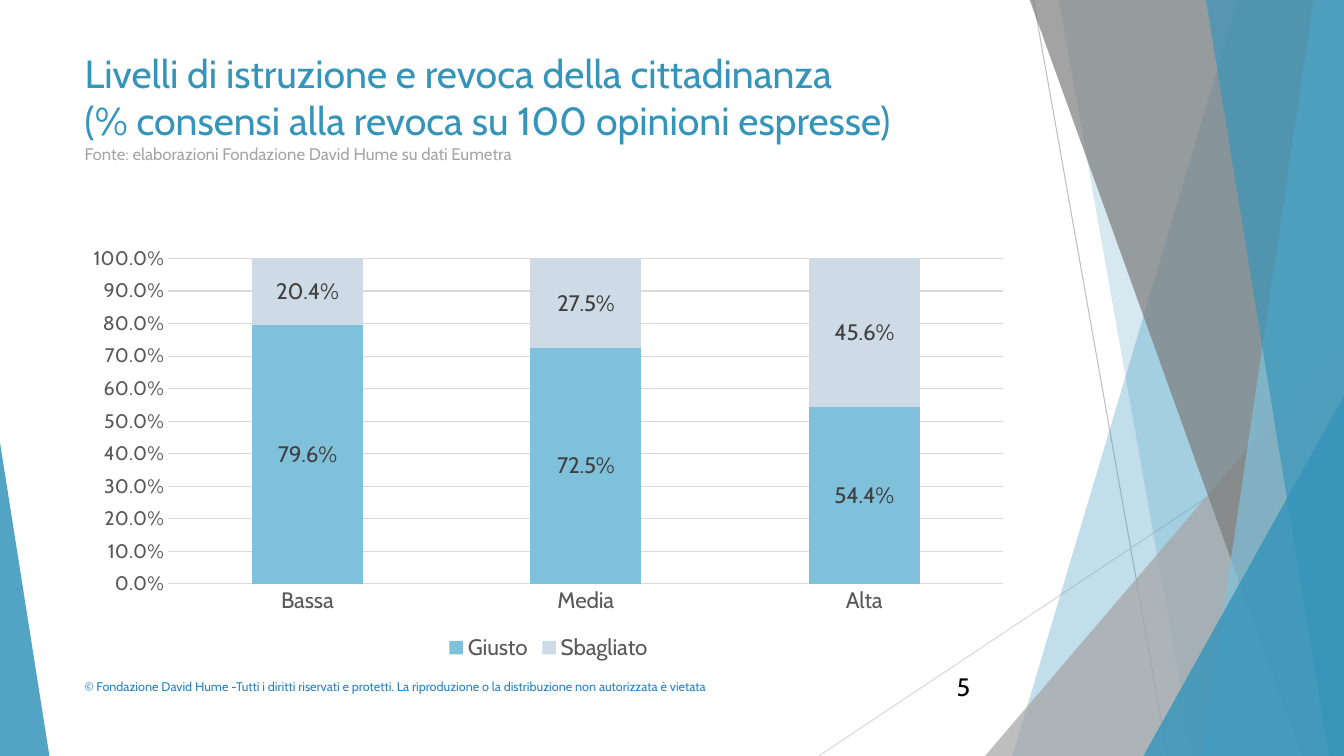
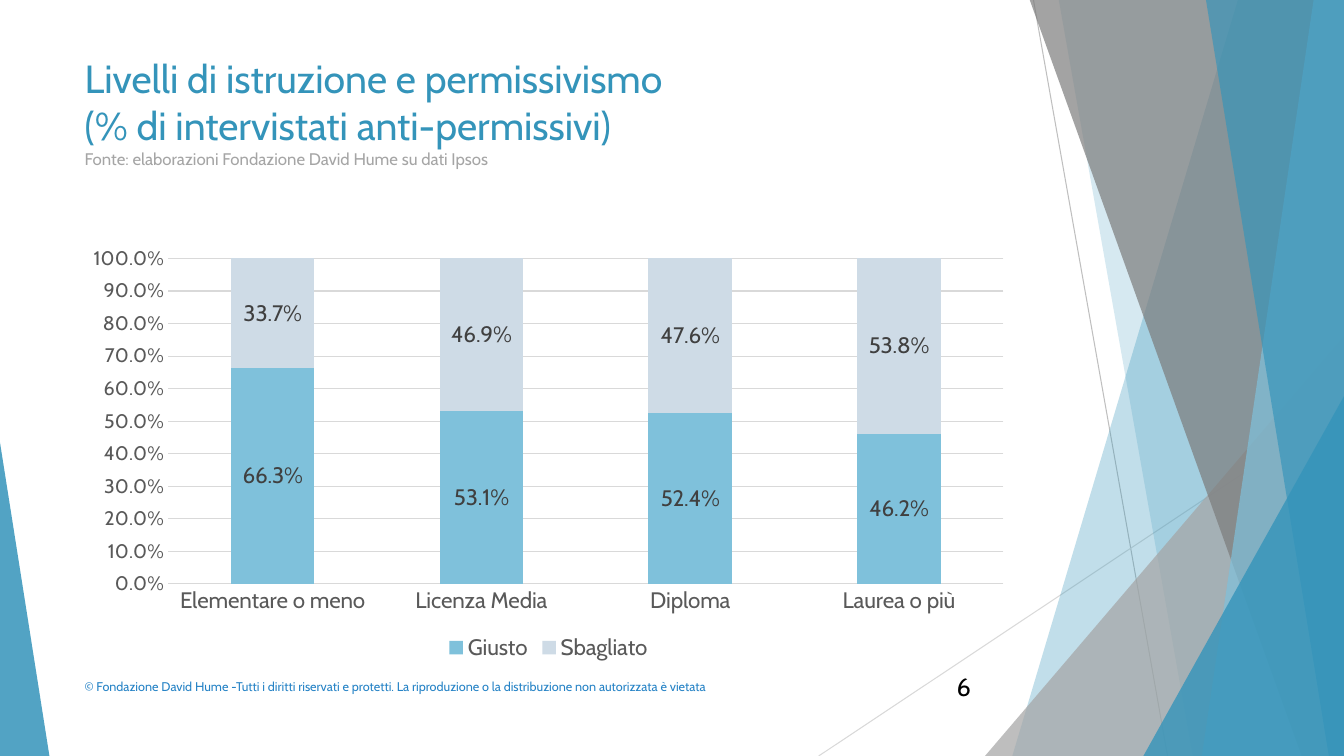
from copy import deepcopy
from dataclasses import dataclass
from typing import NamedTuple

from lxml import etree
from pptx import Presentation
from pptx import util as u
from pptx.chart.data import CategoryChartData
from pptx.dml.color import RGBColor
from pptx.enum import chart as charts, shapes, text
from pptx.oxml.ns import qn

PX = 9144
WIDTH, HEIGHT = 1333, 750
LEFT, CONTENT_WIDTH = 74, 940


@dataclass(frozen=True)
class Theme:
    font: str = "Cabin"
    accent: str = "3494BA"
    light_accent: str = "7FC1DB"
    pale: str = "CEDBE6"
    grey: str = "A5A5A5"
    dark_grey: str = "7C7C7C"
    rule: str = "D9D9D9"
    strong_rule: str = "BFBFBF"
    axis_text: str = "595959"
    label_text: str = "404040"
    copyright: str = "2683C6"
    black: str = "000000"
    title_size: int = 28
    source_size: int = 12
    copyright_size: int = 9
    number_size: int = 18
    chart_size: int = 16
    scale_size: int = 14
    rule_width: float = 0.75


THEME = Theme()


class Box(NamedTuple):
    left: int
    top: int
    width: int
    height: int

    def emu(self) -> list[int]:
        return [value * PX for value in self]


class Ray(NamedTuple):
    start: tuple[int, int]
    end: tuple[int, int]
    color: str


class Shard(NamedTuple):
    top_x: int
    bottom_x: int
    color: str
    opacity: int


class Wedge(NamedTuple):
    box: Box
    apex: int
    color: str
    opacity: int


class Span(NamedTuple):
    words: str
    size: int
    color: str


class Survey(NamedTuple):
    number: int
    title_top: int
    title: list[str]
    source: str
    answers: dict[str, tuple[float, float]]


BACKDROP = [
    Ray((1025, 0), (1158, HEIGHT), THEME.strong_rule),
    Ray((WIDTH, 403), (812, HEIGHT), THEME.rule),
    Shard(1228, 1004, THEME.accent, 30),
    Shard(1050, 1183, THEME.accent, 20),
    Wedge(Box(977, 333, 356, 417), 1, THEME.grey, 72),
    Shard(1021, 1291, THEME.dark_grey, 70),
    Shard(1303, 1192, THEME.light_accent, 70),
    Shard(1196, 1318, THEME.accent, 65),
    Wedge(Box(1134, 393, 199, 357), 1, THEME.accent, 80),
    Wedge(Box(0, 439, 49, 311), 0, THEME.accent, 85),
]

SERIES = {"Giusto": THEME.light_accent, "Sbagliato": THEME.pale}
PERCENT = "0.0%"
COPYRIGHT = (
    "© Fondazione David Hume -Tutti i diritti riservati e protetti. "
    "La riproduzione o la distribuzione non autorizzata è vietata"
)

SURVEYS = [
    Survey(
        5,
        44,
        [
            "Livelli di istruzione e revoca della cittadinanza",
            "(% consensi alla revoca su 100 opinioni espresse)",
        ],
        "Fonte: elaborazioni Fondazione David Hume su dati Eumetra",
        {"Bassa": (0.796, 0.204), "Media": (0.725, 0.275), "Alta": (0.544, 0.456)},
    ),
    Survey(
        6,
        49,
        ["Livelli di istruzione e permissivismo", "(% di intervistati anti-permissivi)"],
        "Fonte: elaborazioni Fondazione David Hume su dati Ipsos",
        {
            "Elementare o meno": (0.663, 0.337),
            "Licenza Media": (0.531, 0.469),
            "Diploma": (0.524, 0.476),
            "Laurea o più": (0.462, 0.538),
        },
    ),
]


def rgb(color: str) -> RGBColor:
    return RGBColor.from_string(color)


def style_font(font, size: int, color: str) -> None:
    font.name = THEME.font
    font.size = u.Pt(size)
    font.bold = False
    font.color.rgb = rgb(color)


def style_line(line, color: str) -> None:
    line.color.rgb = rgb(color)
    line.width = u.Pt(THEME.rule_width)


def paint(shape, color: str, opacity: int) -> None:
    shape.shadow.inherit = False
    shape.line.fill.background()
    shape.fill.solid()
    shape.fill.fore_color.rgb = rgb(color)
    tint = shape._element.spPr.find(qn("a:solidFill"))[0]
    etree.SubElement(tint, qn("a:alpha")).set("val", str(opacity * 1000))


def draw_ray(group, ray: Ray) -> None:
    ends = [value * PX for value in (*ray.start, *ray.end)]
    line = group.shapes.add_connector(shapes.MSO_CONNECTOR.STRAIGHT, *ends)
    style_line(line.line, ray.color)
    etree.SubElement(line._element.spPr, qn("a:effectLst"))


def draw_shard(group, shard: Shard) -> None:
    outline = group.shapes.build_freeform(shard.top_x, -1, scale=PX)
    outline.add_line_segments(
        [(WIDTH, -1), (WIDTH, HEIGHT), (shard.bottom_x, HEIGHT)], close=True
    )
    paint(outline.convert_to_shape(), shard.color, shard.opacity)


def draw_wedge(group, wedge: Wedge) -> None:
    triangle = group.shapes.add_shape(
        shapes.MSO_SHAPE.ISOSCELES_TRIANGLE, *wedge.box.emu()
    )
    triangle.adjustments[0] = wedge.apex
    paint(triangle, wedge.color, wedge.opacity)


def move_backdrop_to_layout(page, layout) -> None:
    group = page.shapes.add_group_shape()
    drawers = {Ray: draw_ray, Shard: draw_shard, Wedge: draw_wedge}
    for part in BACKDROP:
        drawers[type(part)](group, part)
    for number, properties in enumerate(group._element.iter(qn("p:cNvPr")), 100):
        properties.set("id", str(number))
    layout.shapes._spTree.insert(2, group._element)


def write_lines(frame, spans: list[Span], anchor) -> None:
    frame.word_wrap = True
    frame.auto_size = text.MSO_AUTO_SIZE.NONE
    frame.vertical_anchor = anchor
    para = frame.paragraphs[0]
    para.alignment = text.PP_ALIGN.LEFT
    for index, span in enumerate(spans):
        run = para.add_run()
        run.text = span.words
        style_font(run.font, span.size, span.color)
        if index < len(spans) - 1:
            para.add_line_break()
            para._p[-1].append(deepcopy(run._r.rPr))


def add_title(page, survey: Survey) -> None:
    title = page.shapes.title
    box = Box(LEFT, survey.title_top, CONTENT_WIDTH, 144)
    title.left, title.top, title.width, title.height = box.emu()
    spans = [Span(line, THEME.title_size, THEME.accent) for line in survey.title]
    spans.append(Span(survey.source, THEME.source_size, THEME.grey))
    write_lines(title.text_frame, spans, text.MSO_ANCHOR.TOP)


def add_text(page, box: Box, span: Span, anchor) -> None:
    write_lines(page.shapes.add_textbox(*box.emu()).text_frame, [span], anchor)


def add_footer(page, number: int) -> None:
    notice = Span(COPYRIGHT, THEME.copyright_size, THEME.copyright)
    add_text(page, Box(LEFT, 661, 689, 40), notice, text.MSO_ANCHOR.MIDDLE)
    digits = Span(str(number), THEME.number_size, THEME.black)
    add_text(page, Box(939, 661, 75, 40), digits, text.MSO_ANCHOR.TOP)


def style_axes(chart) -> None:
    category, value = chart.category_axis, chart.value_axis
    sizes = (THEME.chart_size, THEME.scale_size)
    for axis, size in zip((category, value), sizes):
        axis.major_tick_mark = axis.minor_tick_mark = charts.XL_TICK_MARK.NONE
        style_font(axis.tick_labels.font, size, THEME.axis_text)
    category.has_major_gridlines = False
    style_line(category.format.line, THEME.rule)
    value.minimum_scale, value.maximum_scale, value.major_unit = 0, 1, 0.1
    value.has_major_gridlines = True
    style_line(value.major_gridlines.format.line, THEME.rule)
    value.format.line.fill.background()
    value.tick_labels.number_format = PERCENT
    value.tick_labels.number_format_is_linked = False


def add_answer_chart(page, answers: dict[str, tuple[float, float]]) -> None:
    data = CategoryChartData(number_format=PERCENT)
    data.categories = list(answers)
    for name, values in zip(SERIES, zip(*answers.values())):
        data.add_series(name, values)
    chart = page.shapes.add_chart(
        charts.XL_CHART_TYPE.COLUMN_STACKED,
        *Box(LEFT, 236, CONTENT_WIDTH, 424).emu(),
        data,
    ).chart
    style_font(chart.font, THEME.chart_size, THEME.black)
    chart.has_title = False
    chart.has_legend = True
    chart.legend.position = charts.XL_LEGEND_POSITION.BOTTOM
    chart.legend.include_in_layout = False
    style_font(chart.legend.font, THEME.chart_size, THEME.axis_text)
    style_axes(chart)
    plot = chart.plots[0]
    plot.gap_width, plot.overlap, plot.vary_by_categories = 150, 100, False
    for series, color in zip(plot.series, SERIES.values()):
        series.format.fill.solid()
        series.format.fill.fore_color.rgb = rgb(color)
        labels = series.data_labels
        labels.show_value = True
        labels.position = charts.XL_LABEL_POSITION.CENTER
        labels.number_format = PERCENT
        labels.number_format_is_linked = False
        style_font(labels.font, THEME.chart_size, THEME.label_text)


def main() -> None:
    deck = Presentation()
    deck.slide_width, deck.slide_height = WIDTH * PX, HEIGHT * PX
    layout = deck.slide_layouts.get_by_name("Title Only")
    for survey in SURVEYS:
        page = deck.slides.add_slide(layout)
        add_title(page, survey)
        add_footer(page, survey.number)
        add_answer_chart(page, survey.answers)
    move_backdrop_to_layout(deck.slides[0], layout)
    deck.save("out.pptx")


if __name__ == "__main__":
    main()
